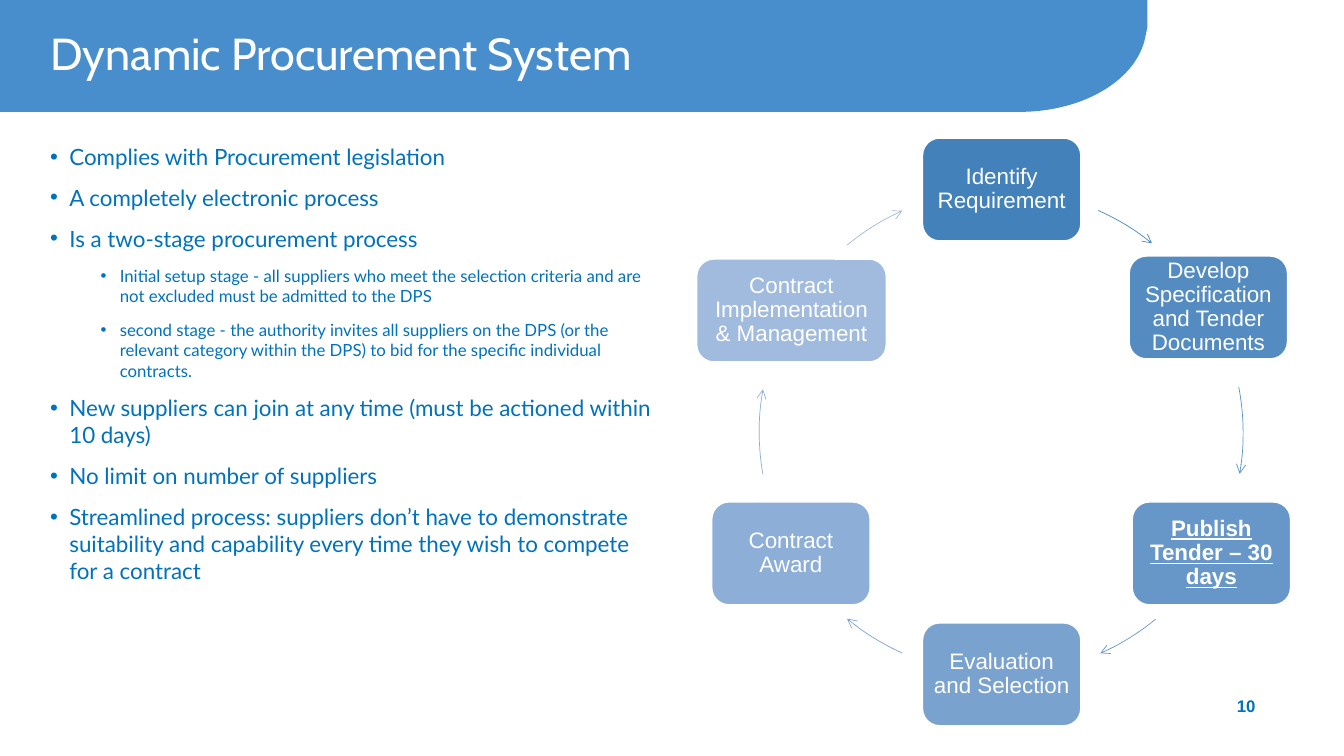
from lxml.etree import SubElement
from pptx import Presentation
from pptx.dml.color import RGBColor
from pptx.enum.shapes import MSO_SHAPE
from pptx.enum.text import MSO_ANCHOR, PP_ALIGN
from pptx.oxml.ns import qn
from pptx.util import Inches, Pt

WHITE = RGBColor(0xFF, 0xFF, 0xFF)
BANNER_BLUE = RGBColor(0x49, 0x8E, 0xCC)
TEXT_BLUE = RGBColor(0x00, 0x72, 0xBC)

BULLETS = [
    (0, "Complies with Procurement legislation"),
    (0, "A completely electronic process"),
    (0, "Is a two-stage procurement process"),
    (2, "Initial setup stage - all suppliers who meet the selection criteria "
        "and are not excluded must be admitted to the DPS"),
    (2, "second stage - the authority invites all suppliers on the DPS (or the "
        "relevant category within the DPS) to bid for the specific individual contracts."),
    (0, "New suppliers can join at any time (must be actioned within 10 days)"),
    (0, "No limit on number of suppliers"),
    (0, "Streamlined process: suppliers don’t have to demonstrate suitability "
        "and capability every time they wish to compete for a contract"),
]

STEP_WIDTH, STEP_HEIGHT = 1.57, 1.02
STEPS = [
    ("Identify Requirement", 9.15, 1.37, STEP_WIDTH, RGBColor(0x42, 0x81, 0xB9)),
    ("Develop Specification and Tender Documents", 11.2, 2.54, STEP_WIDTH,
     RGBColor(0x54, 0x8C, 0xC2)),
    ("Publish Tender – 30 days", 11.23, 4.98, STEP_WIDTH, RGBColor(0x67, 0x97, 0xC9)),
    ("Evaluation and Selection", 9.15, 6.18, STEP_WIDTH, RGBColor(0x7A, 0xA2, 0xCF)),
    ("Contract Award", 7.06, 4.98, STEP_WIDTH, RGBColor(0x8D, 0xAE, 0xD6)),
    ("Contract Implementation & Management", 6.91, 2.57, 1.88, RGBColor(0xA0, 0xBB, 0xDD)),
]
KEY_STEP = "Publish Tender – 30 days"

CYCLE_SIZE = 4.81
ARCS = [
    (7.51, 1.88, 294, 308.9, RGBColor(0x46, 0x88, 0xC3)),
    (7.52, 1.89, 349.1, 9.7, RGBColor(0x58, 0x91, 0xC8)),
    (7.53, 1.88, 50.6, 66, RGBColor(0x6A, 0x9A, 0xCD)),
    (7.53, 1.88, 114.2, 129.6, RGBColor(0x7C, 0xA4, 0xD2)),
    (7.53, 1.88, 169.9, 190.1, RGBColor(0x8E, 0xAF, 0xD8)),
    (7.53, 1.88, 230.4, 245.8, RGBColor(0x9F, 0xBA, 0xDD)),
]
ADJUSTMENT_PER_DEGREE = 0.6


def add_banner(slide):
    """Draw the title banner with its rounded lower right corner."""
    edge = [(11.38, 0), (11.38, 0.27), (11.35, 0.41)]
    corner = [(11.24, 0.81), (10.73, 1.11), (10.11, 1.11)]
    builder = slide.shapes.build_freeform(0, 0)
    builder.add_line_segments([(Inches(x), Inches(y)) for x, y in [*edge, *corner, (0, 1.11)]])
    banner = builder.convert_to_shape()
    segments = list(banner._element.iter(qn("a:lnTo")))[len(edge):len(edge) + len(corner)]
    outline = segments[0].getparent()
    curve = SubElement(outline, qn("a:cubicBezTo"))
    segments[0].addprevious(curve)
    for segment in segments:
        curve.append(segment[0])
        outline.remove(segment)
    banner.shadow.inherit = False
    banner.fill.solid()
    banner.fill.fore_color.rgb = BANNER_BLUE
    banner.line.fill.background()


def add_arc(slide, left, top, start, end, color):
    """Draw a clockwise arrow between two steps, with angles in degrees."""
    arc = slide.shapes.add_shape(MSO_SHAPE.ARC, Inches(left), Inches(top),
                                 Inches(CYCLE_SIZE), Inches(CYCLE_SIZE))
    arc.adjustments[0] = start * ADJUSTMENT_PER_DEGREE
    arc.adjustments[1] = end * ADJUSTMENT_PER_DEGREE
    arc.shadow.inherit = False
    arc.fill.background()
    arc.line.color.rgb = color
    arc.line.width = Pt(0.5)
    SubElement(arc.line._get_or_add_ln(), qn("a:tailEnd"), type="arrow")


def style_runs(paragraph, font_name, size, color, bold=False):
    """Format every run of a paragraph."""
    for run in paragraph.runs:
        run.font.name = font_name
        run.font.size = Pt(size)
        run.font.color.rgb = color
        run.font.bold = bold


def add_text_frame(slide, left, top, width, height, anchor):
    """Add a wrapping text box and return its frame."""
    box = slide.shapes.add_textbox(Inches(left), Inches(top), Inches(width), Inches(height))
    box.text_frame.word_wrap = True
    box.text_frame.vertical_anchor = anchor
    return box.text_frame


def add_title(slide, text):
    """Write the slide title on the banner."""
    frame = add_text_frame(slide, 0.4, 0.05, 10.21, 1.02, MSO_ANCHOR.MIDDLE)
    frame.text = text
    title = frame.paragraphs[0]
    title.line_spacing = 0.9
    style_runs(title, "Cabin", 32, WHITE)


def add_bullets(slide, bullets):
    """Write the two-level bullet list."""
    frame = add_text_frame(slide, 0.4, 1.37, 6.27, 4.87, MSO_ANCHOR.TOP)
    for index, (level, text) in enumerate(bullets):
        bullet = frame.add_paragraph() if index else frame.paragraphs[0]
        bullet.text = text
        bullet.level = level
        if index:
            bullet.space_before = Pt(10)
        properties = bullet._p.get_or_add_pPr()
        properties.set("marL", str(Inches(0.69 if level else 0.19)))
        properties.set("indent", str(Inches(-0.19)))
        SubElement(properties, qn("a:buFont"), typeface="Arial")
        SubElement(properties, qn("a:buChar"), char="•")
        style_runs(bullet, "Lato", 12 if level else 16, TEXT_BLUE)


def add_step(slide, text, left, top, width, color):
    """Draw one step of the procurement cycle."""
    step = slide.shapes.add_shape(MSO_SHAPE.ROUNDED_RECTANGLE, Inches(left), Inches(top),
                                  Inches(width), Inches(STEP_HEIGHT))
    step.shadow.inherit = False
    step.fill.solid()
    step.fill.fore_color.rgb = color
    step.line.color.rgb = WHITE
    step.line.width = Pt(1)
    frame = step.text_frame
    frame.word_wrap = True
    frame.vertical_anchor = MSO_ANCHOR.MIDDLE
    frame.margin_left = frame.margin_right = Inches(0.06)
    frame.margin_top = frame.margin_bottom = Inches(0)
    frame.text = text
    label = frame.paragraphs[0]
    label.alignment = PP_ALIGN.CENTER
    label.line_spacing = 0.9
    style_runs(label, "Arial", 16, WHITE, bold=text == KEY_STEP)
    label.runs[0].font.underline = text == KEY_STEP


def add_page_number(slide, number):
    """Write the page number at the lower right."""
    frame = add_text_frame(slide, 9.44, 6.8, 3.11, 0.4, MSO_ANCHOR.MIDDLE)
    frame.text = number
    frame.paragraphs[0].alignment = PP_ALIGN.RIGHT
    style_runs(frame.paragraphs[0], "Arial", 12, TEXT_BLUE, bold=True)


def main():
    """Build and save the slide."""
    presentation = Presentation()
    presentation.slide_width = Inches(13.33)
    presentation.slide_height = Inches(7.5)
    slide = presentation.slides.add_slide(presentation.slide_layouts[6])
    add_banner(slide)
    add_page_number(slide, "10")
    add_bullets(slide, BULLETS)
    add_title(slide, "Dynamic Procurement System")
    for step, arc in zip(STEPS, ARCS):
        add_step(slide, *step)
        add_arc(slide, *arc)
    presentation.save("out.pptx")


if __name__ == "__main__":
    main()
